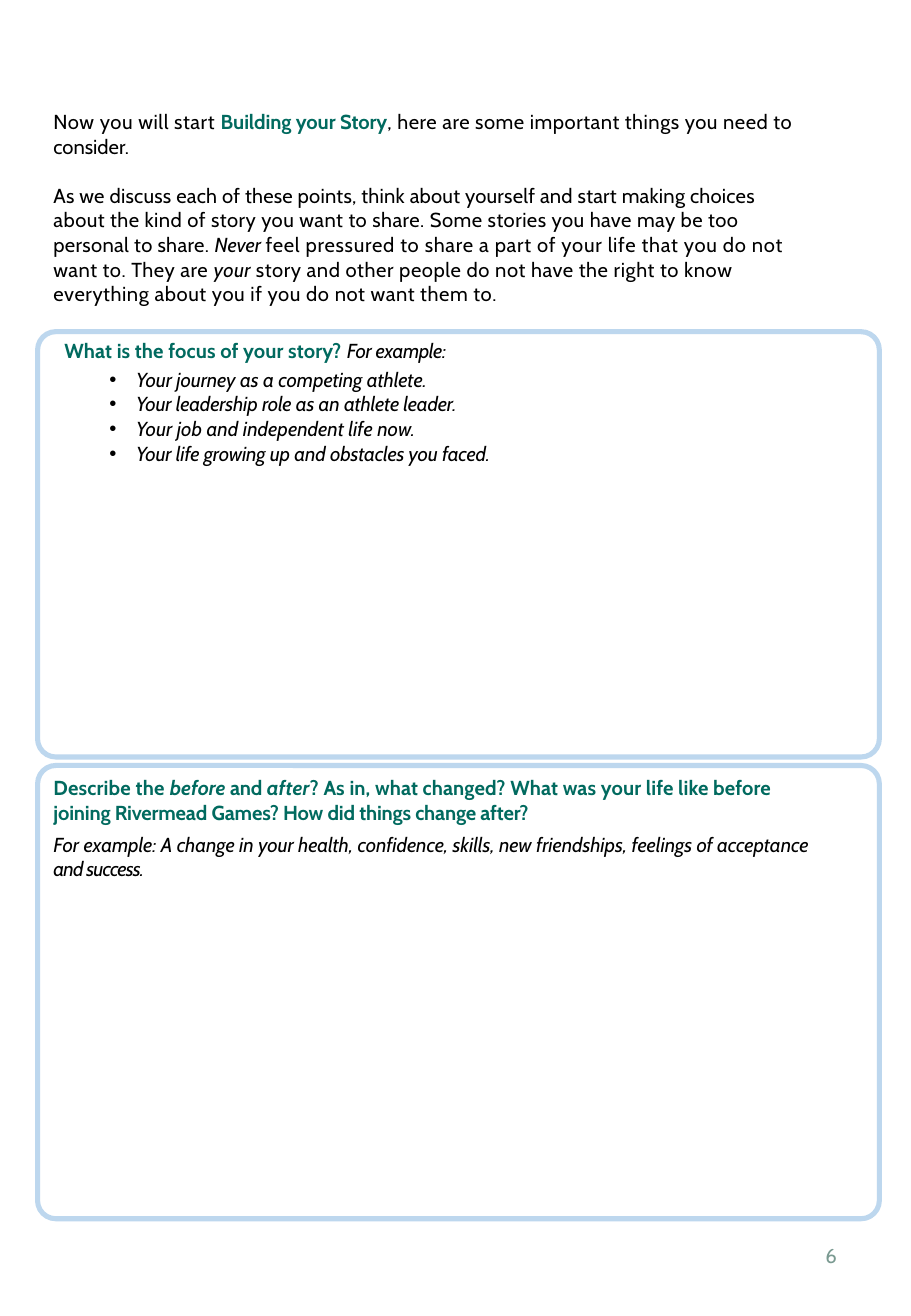
from pptx import Presentation
from pptx.dml.color import RGBColor
from pptx.enum.shapes import MSO_SHAPE as Shape
from pptx.enum.text import MSO_ANCHOR as Anchor, MSO_AUTO_SIZE as Fit, PP_ALIGN as Align
from pptx.util import Pt
from lxml.etree import SubElement
from pptx.oxml.ns import qn

SCALE = 9144  # EMU per px, 100 px to the inch
GREEN, BLACK, BLUE, GREY = "016A5F", "000000", "BDD7EE", "7A9A91"


def px(n):
    return n * SCALE


def color(code):
    return RGBColor.from_string(code)


class Page:
    """Holds the style and the current slide."""
    face, size = "Cabin", 12

    def __init__(self, deck):
        self.slide = deck.slides.add_slide(deck.slide_layouts[1])
        self.title, self.body = self.slide.placeholders

    def frame(self, x, y, w, h, round_by=15):
        box = self.slide.shapes.add_shape(
            Shape.ROUNDED_RECTANGLE, px(x), px(y), px(w), px(h))
        box.adjustments[0] = round_by / min(w, h)
        box.shadow.inherit = False
        box.fill.background()
        box.line.color.rgb = color(BLUE)
        box.line.width = Pt(3)

    def text(self, x, y, w, h, paras, ink=BLACK, gap=0, lead=1.0, holder=None,
             align=Align.LEFT, bullet=False):
        """Each paragraph is a list of (text, spacing in points, style) runs."""
        box = holder or self.slide.shapes.add_textbox(0, 0, 0, 0)
        box.left, box.top, box.width, box.height = map(px, (x, y, w, h))
        frame = box.text_frame
        frame.word_wrap, frame.auto_size = True, Fit.NONE
        frame.vertical_anchor = Anchor.TOP
        frame.margin_left = frame.margin_right = 0
        frame.margin_top = frame.margin_bottom = 0
        for i, runs in enumerate(paras):
            para = frame.add_paragraph() if i else frame.paragraphs[0]
            para.alignment, para.line_spacing = align, lead
            para.space_before = Pt(gap if i else 0)
            font = para.font
            font.name, font.size = self.face, Pt(self.size)
            font.color.rgb = color(ink)
            if bullet:
                self.dot(para)
            for run in runs:
                self.run(para, *run)
        return frame

    def run(self, para, words, space=0, style=""):
        run = para.add_run()
        run.text = words
        if "b" in style:
            run.font.bold = True
            run.font.color.rgb = color(GREEN)
        if "i" in style:
            run.font.italic = True
        if space:
            run.font._element.set("spc", str(round(space * 100)))

    def dot(self, para):
        props = para._p.get_or_add_pPr()
        props.set("marL", str(px(59)))
        props.set("indent", str(px(-22)))
        for old in props.findall(qn("a:buChar")):
            props.remove(old)
        mark = SubElement(props, qn("a:buChar"))
        mark.set("char", "•")
        props.find(qn("a:defRPr")).addprevious(mark)


def main():
    deck = Presentation()
    deck.slide_width, deck.slide_height = px(750), px(1083)
    page = Page(deck)

    # Introduction
    page.text(44, 90, 614, 162, [
        [("Now you will start ", .35), ("Building your Story", -.07, "b"),
         (", here are some important things you need to ", .3),
         ("consider.",)],
        [("As we discuss each of these points, think about yourself "
          "and start making choices ", .15),
         ("about the kind of story you want to share. Some stories "
          "you have may be too ", .27),
         ("personal to share. ", .2), ("Never ", 0, "i"),
         ("feel pressured to share a part of your life that you do not ", .42),
         ("want to. They are ", .3), ("your ", .2, "i"),
         ("story and other people do not have the right to know "
          "everything about you if you do not want them to.", .35)],
    ], gap=14.5, lead=1.01)

    # Answer frames
    for top, height in ((273, 350), (630, 373)):
        page.frame(31, top, 693, height)

    # Focus of the story
    page.text(53, 278, 627, 20, [
        [("What is the focus of your story? ", .05, "b"),
         ("For example:", -.25, "i")],
    ], holder=page.title)
    points = (
        ("Your journey as a competing athlete.", -.05),
        ("Your leadership role as an athlete leader.", -.1),
        ("Your job and independent life now.", 0),
        ("Your life growing up and obstacles you faced.", -.1),
    )
    page.text(53, 302, 627, 86,
              [[(words, space, "i")] for words, space in points],
              gap=.2, holder=page.body, bullet=True)

    # Before and after
    page.text(44, 638, 632, 89, [
        [("Describe the ", .1, "b"), ("before ", 0, "bi"),
         ("and ", -.1, "b"), ("after", .1, "bi"),
         ("? As in, what changed? What was your life like before ", .05, "b"),
         ("joining Rivermead Games? How did things change after?", -.1, "b")],
        [("For example: A change in your health, confidence, skills, "
          "new friendships, feelings of acceptance ", -.05, "i"),
         ("and success.", -.5, "i")],
    ], gap=4.3, lead=1.01)

    # Page number
    number = page.text(530, 1004, 159, 58, [[("6",)]], ink=GREY,
                       align=Align.RIGHT)
    number.vertical_anchor = Anchor.MIDDLE

    deck.save("out.pptx")


if __name__ == "__main__":
    main()
